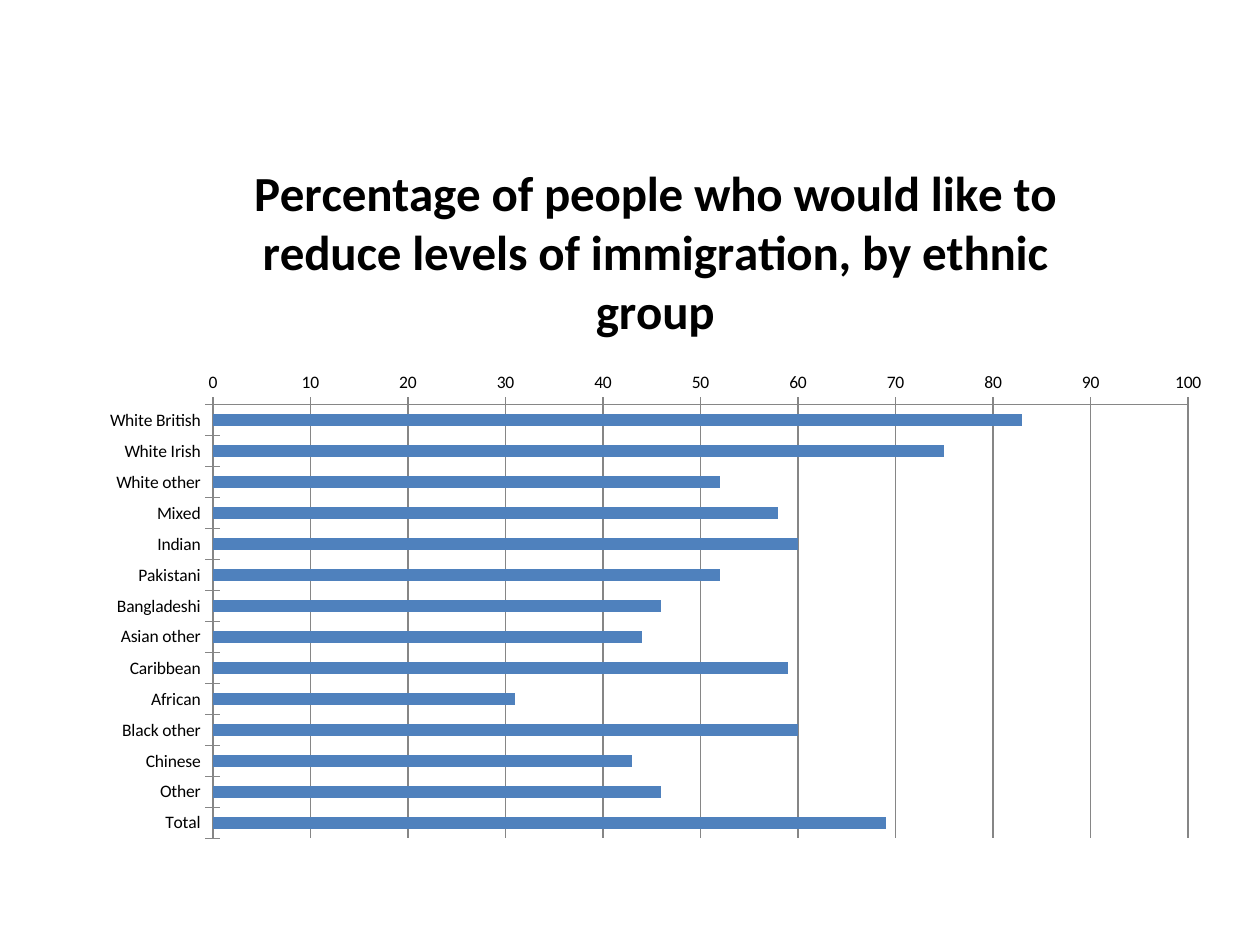
from dataclasses import dataclass

from lxml import etree
from pptx import Presentation
from pptx import util as u
from pptx.chart import data as chart_data
from pptx.dml import color
from pptx.enum import chart as kinds
from pptx.oxml import ns


@dataclass(frozen=True)
class Theme:
    """Colours, font and type sizes of the deck."""
    font: str = "Calibri"
    ink: str = "000000"
    bar: str = "4F81BD"
    line: str = "868686"
    title_size: int = 28
    label_size: int = 10


THEME = Theme()
TITLE = ("Percentage of people who would like to reduce levels of "
         "immigration, by ethnic group")
SHARES = {
    "White British": 83, "White Irish": 75, "White other": 52, "Mixed": 58,
    "Indian": 60, "Pakistani": 52, "Bangladeshi": 46, "Asian other": 44,
    "Caribbean": 59, "African": 31, "Black other": 60, "Chinese": 43,
    "Other": 46, "Total": 69,
}
PLOT = {"x": 0.11, "y": 0.38, "w": 0.86, "h": 0.6}


def style_font(font, size, bold=False):
    """Apply the theme font at the given size."""
    font.name = THEME.font
    font.size = u.Pt(size)
    font.bold = bold
    font.color.rgb = color.RGBColor.from_string(THEME.ink)


def style_line(line):
    """Give an axis or gridline the thin theme line."""
    line.width = u.Pt(0.75)
    line.color.rgb = color.RGBColor.from_string(THEME.line)


def set_title(chart):
    """Write the bold title above the plot."""
    chart.has_title = True
    chart.chart_title.include_in_layout = False
    frame = chart.chart_title.text_frame
    frame.text = TITLE
    style_font(frame.paragraphs[0].runs[0].font, THEME.title_size, True)


def set_axes(chart):
    """List groups from the top and scale percentages from 0 to 100."""
    groups, percent = chart.category_axis, chart.value_axis
    groups.reverse_order = True
    groups.has_major_gridlines = False
    percent.minimum_scale, percent.maximum_scale = 0, 100
    percent.major_unit = 10
    percent.has_major_gridlines = True
    style_line(percent.major_gridlines.format.line)
    for axis in (groups, percent):
        axis.major_tick_mark = kinds.XL_TICK_MARK.CROSS
        axis.minor_tick_mark = kinds.XL_TICK_MARK.NONE
        style_line(axis.format.line)
        style_font(axis.tick_labels.font, THEME.label_size)


def set_plot_area(chart):
    """Fix the inner plot area as fractions of the chart."""
    area = chart.plots[0]._element.getparent()
    for old in area.findall(ns.qn("c:layout")):
        area.remove(old)
    layout = etree.Element(ns.qn("c:layout"))
    manual = etree.SubElement(layout, ns.qn("c:manualLayout"))
    settings = {"layoutTarget": "inner", "xMode": "edge", "yMode": "edge", **PLOT}
    for name, value in settings.items():
        etree.SubElement(manual, ns.qn(f"c:{name}"), val=str(value))
    area.insert(0, layout)


def add_share_chart(page, left, top, width, height):
    """Draw the bar chart of shares inside the given box."""
    figures = chart_data.CategoryChartData()
    figures.categories = list(SHARES)
    figures.add_series("Series 1", list(SHARES.values()))
    box = [u.Pt(length) for length in (left, top, width, height)]
    chart = page.shapes.add_chart(
        kinds.XL_CHART_TYPE.BAR_CLUSTERED, *box, figures).chart
    style_font(chart.font, THEME.label_size)
    chart.has_legend = False
    plot = chart.plots[0]
    plot.vary_by_categories = False
    plot.gap_width = 150
    fill = plot.series[0].format.fill
    fill.solid()
    fill.fore_color.rgb = color.RGBColor.from_string(THEME.bar)
    set_title(chart)
    set_axes(chart)
    set_plot_area(chart)


def main():
    """Build and save the one-page deck."""
    deck = Presentation()
    deck.slide_width, deck.slide_height = u.Pt(720), u.Pt(540)
    page = deck.slides.add_slide(deck.slide_layouts[6])
    add_share_chart(page, 50.4, 74.2, 648, 413.3)
    deck.save("out.pptx")


if __name__ == "__main__":
    main()
